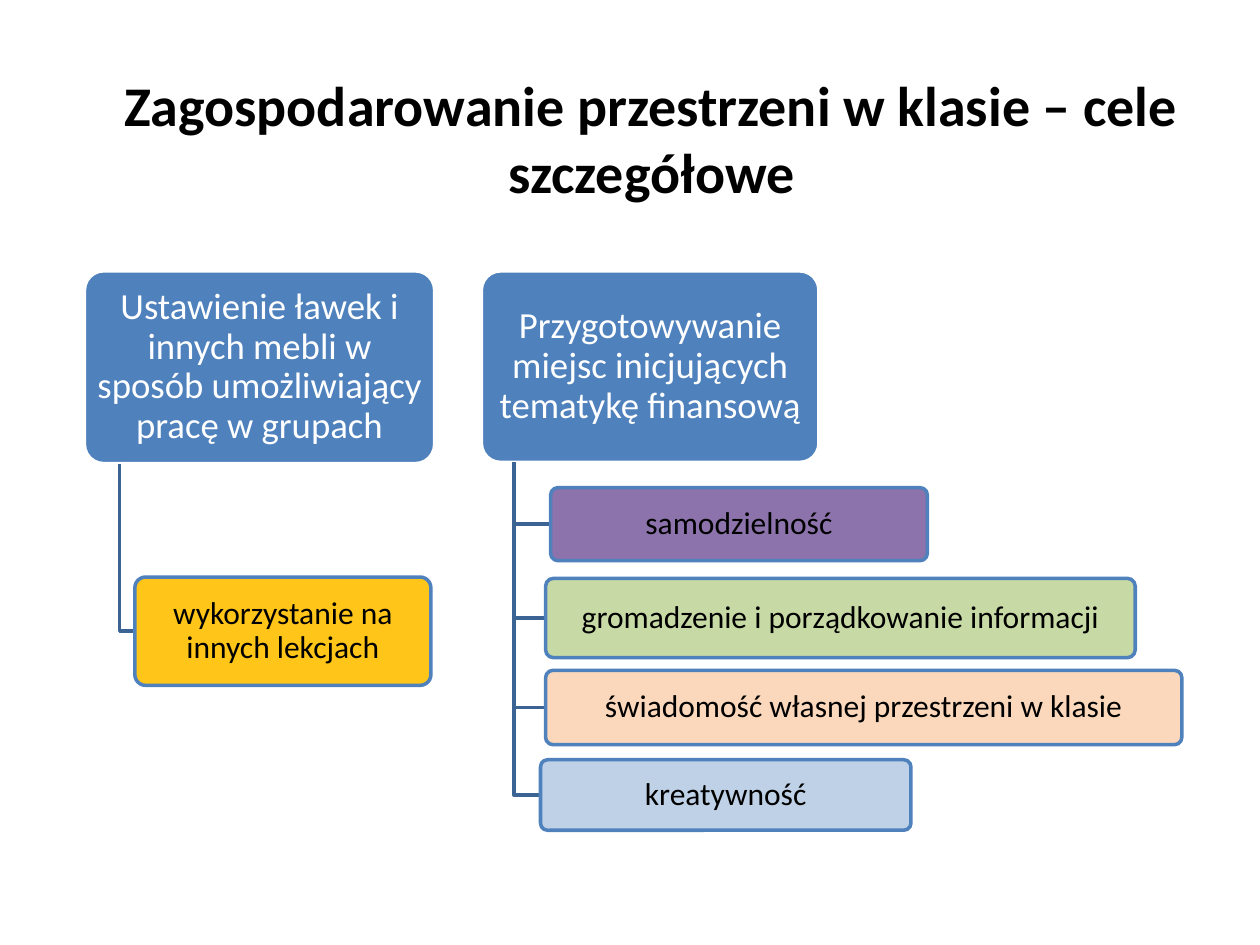
"""Build a slide on the specific goals of arranging classroom space."""
from dataclasses import dataclass

from lxml import etree
from pptx import Presentation
from pptx.dml.color import RGBColor
from pptx.enum.shapes import MSO_SHAPE
from pptx.enum.text import MSO_ANCHOR, MSO_AUTO_SIZE, PP_ALIGN
from pptx.oxml.ns import qn
from pptx.util import Inches, Pt

ROUNDED = MSO_SHAPE.ROUNDED_RECTANGLE
MIDDLE = MSO_ANCHOR.MIDDLE
CENTER = PP_ALIGN.CENTER
NO_AUTOFIT = MSO_AUTO_SIZE.NONE


@dataclass(frozen=True)
class Theme:
    font: str = "Calibri"
    black: str = "000000"
    white: str = "FFFFFF"
    blue: str = "4F81BD"
    branch: str = "3B6495"
    gold: str = "FFC000"
    purple: str = "8064A2"
    green: str = "C2D59B"
    peach: str = "FBD4B4"
    pale_blue: str = "B7CCE4"
    title_size: int = 32
    topic_size: int = 21
    goal_size: int = 18
    line_width: int = 2
    goal_opacity: int = 90


theme = Theme()


def style_text(frame, text, size, color, bold=False):
    frame.text = text
    frame.word_wrap = True
    frame.auto_size = NO_AUTOFIT
    frame.vertical_anchor = MIDDLE
    paragraph = frame.paragraphs[0]
    paragraph.alignment = CENTER
    paragraph.font.name = theme.font
    paragraph.font.size = Pt(size)
    paragraph.font.bold = bold
    paragraph.font.color.rgb = RGBColor.from_string(color)
    return paragraph


def add_card(box, text, size, color, fill, line, inset, opacity=100):
    card = slide.shapes.add_shape(ROUNDED, *map(Inches, box))
    card.adjustments[0] = 0.1
    card.shadow.inherit = False
    card.fill.solid()
    card.fill.fore_color.rgb = RGBColor.from_string(fill)
    if opacity < 100:
        tint = card.fill._xPr.find(qn("a:solidFill"))[0]
        etree.SubElement(tint, qn("a:alpha"), val=str(opacity * 1000))
    card.line.color.rgb = RGBColor.from_string(line)
    card.line.width = Pt(theme.line_width)
    frame = card.text_frame
    frame.margin_left = frame.margin_right = Inches(0.04)
    frame.margin_top = frame.margin_bottom = Inches(inset)
    style_text(frame, text, size, color).line_spacing = 0.9


topics = [
    ("Ustawienie ławek i innych mebli w sposób umożliwiający pracę w grupach",
     (0.67, 2.15, 2.78, 1.53), 0.95,
     [("wykorzystanie na innych lekcjach", (1.07, 4.58, 2.35, 0.86), theme.gold)]),
    ("Przygotowywanie miejsc inicjujących tematykę finansową",
     (3.82, 2.15, 2.68, 1.52), 4.08,
     [("samodzielność", (4.37, 3.87, 2.99, 0.58), theme.purple),
      ("gromadzenie i porządkowanie informacji", (4.33, 4.59, 4.68, 0.63), theme.green),
      ("świadomość własnej przestrzeni w klasie", (4.33, 5.32, 5.05, 0.59), theme.peach),
      ("kreatywność", (4.29, 6.03, 2.94, 0.56), theme.pale_blue)]),
]

deck = Presentation()
deck.slide_width, deck.slide_height = Inches(10), Inches(7.5)
slide = deck.slides.add_slide(deck.slide_layouts[5])

heading = slide.shapes.title
heading.left, heading.top = Inches(0.67), Inches(0.47)
heading.width, heading.height = Inches(9), Inches(1.25)
style_text(heading.text_frame, "Zagospodarowanie przestrzeni w klasie – cele szczegółowe",
           theme.title_size, theme.black, bold=True)

for topic, topic_box, trunk_x, goals in topics:
    add_card(topic_box, topic, theme.topic_size, theme.white, theme.blue, theme.white, 0.03)
    trunk_top = topic_box[1] + topic_box[3]
    for goal, goal_box, goal_fill in goals:
        left, top, _, height = goal_box
        branch_y = top + height / 2
        outline = slide.shapes.build_freeform(Inches(trunk_x), Inches(trunk_top))
        outline.add_line_segments([(Inches(trunk_x), Inches(branch_y)),
                                   (Inches(left), Inches(branch_y))], close=False)
        branch = outline.convert_to_shape()
        branch.shadow.inherit = False
        branch.fill.background()
        branch.line.color.rgb = RGBColor.from_string(theme.branch)
        branch.line.width = Pt(theme.line_width)
        add_card(goal_box, goal, theme.goal_size, theme.black, goal_fill, theme.blue,
                 0.02, theme.goal_opacity)

deck.save("out.pptx")
